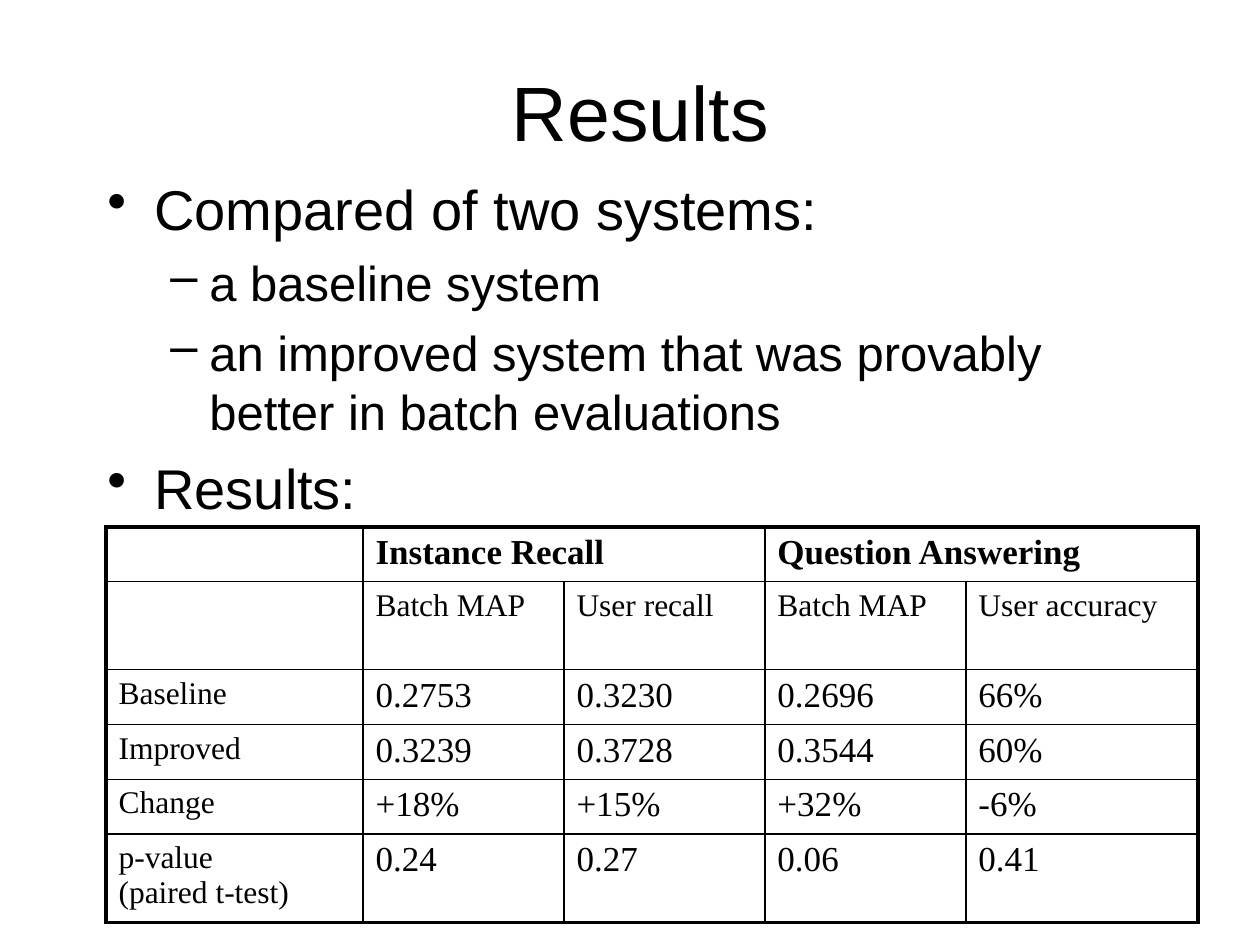
from dataclasses import dataclass

from pptx import Presentation
from pptx.dml.color import RGBColor
from pptx.enum import text
from pptx.oxml import parse_xml
from pptx.oxml.ns import nsdecls
from pptx.util import Emu, Pt

PX = 914400 / 126
BLACK = "000000"
THIN, THICK = 1, 2.25


@dataclass
class Box:
    x: int
    y: int
    w: int
    h: int


@dataclass
class Level:
    size: int
    margin: int
    hang: int
    bullet: str


LEVELS = [Level(32, 47, 47, "•"), Level(28, 102, 39, "–")]

BULLETS = [
    (0, "Compared of two systems:"),
    (1, "a baseline system"),
    (1, "an improved system that was provably better in batch evaluations"),
    (0, "Results:"),
]

COLS = [257, 201, 201, 201, 232]
ROWS = [54, 88, 55, 54, 55, 88]
RESULTS = [
    ["", "Instance Recall", "", "Question Answering", ""],
    ["", "Batch MAP", "User recall", "Batch MAP", "User accuracy"],
    ["Baseline", "0.2753", "0.3230", "0.2696", "66%"],
    ["Improved", "0.3239", "0.3728", "0.3544", "60%"],
    ["Change", "+18%", "+15%", "+32%", "-6%"],
    ["p-value\v(paired t-test)", "0.24", "0.27", "0.06", "0.41"],
]


def px(n: float) -> Emu:
    return Emu(round(n * PX))


def color(value: str) -> RGBColor:
    return RGBColor.from_string(value)


def place(box: Box) -> tuple:
    return px(box.x), px(box.y), px(box.w), px(box.h)


def set_font(p, name: str, size: int, bold: bool = False) -> None:
    p.font.name = name
    p.font.size = Pt(size)
    p.font.bold = bold
    p.font.color.rgb = color(BLACK)


def add_text_box(slide, box: Box):
    tf = slide.shapes.add_textbox(*place(box)).text_frame
    tf.word_wrap = True
    return tf


def add_title(slide, box: Box, title: str) -> None:
    tf = add_text_box(slide, box)
    tf.vertical_anchor = text.MSO_ANCHOR.MIDDLE
    p = tf.paragraphs[0]
    p.text = title
    p.alignment = text.PP_ALIGN.CENTER
    set_font(p, "Arial", 44)


def add_bullets(slide, box: Box, items: list) -> None:
    tf = add_text_box(slide, box)
    for i, (depth, line) in enumerate(items):
        level = LEVELS[depth]
        p = tf.add_paragraph() if i else tf.paragraphs[0]
        p.text = line
        p.level = depth
        p.space_before = Pt(round(level.size * 0.23, 1))
        set_font(p, "Arial", level.size)
        # Hanging indent and bullet character
        pPr = p._p.get_or_add_pPr()
        pPr.set("marL", str(px(level.margin)))
        pPr.set("indent", str(-px(level.hang)))
        bullet = parse_xml(f'<a:buChar {nsdecls("a")} char="{level.bullet}"/>')
        pPr.find("{*}defRPr").addprevious(bullet)


def set_borders(cell, widths: dict) -> None:
    tcPr = cell._tc.get_or_add_tcPr()
    for side, width in widths.items():
        tcPr.append(parse_xml(
            f'<a:ln{side} {nsdecls("a")} w="{Pt(width)}"><a:solidFill>'
            f'<a:srgbClr val="{BLACK}"/></a:solidFill></a:ln{side}>'))


def add_results_table(slide, x: int, y: int) -> None:
    box = Box(x, y, sum(COLS), sum(ROWS))
    table = slide.shapes.add_table(len(ROWS), len(COLS), *place(box)).table
    table.first_row = table.horz_banding = False
    for column, width in zip(table.columns, COLS):
        column.width = px(width)
    for row, height in zip(table.rows, ROWS):
        row.height = px(height)
    for c in (1, 3):
        table.cell(0, c).merge(table.cell(0, c + 1))

    last_row, last_col = len(ROWS) - 1, len(COLS) - 1
    for r, values in enumerate(RESULTS):
        for c, value in enumerate(values):
            cell = table.cell(r, c)
            # Thick outer frame, thin inner grid
            right = c + (cell.span_width - 1 if cell.is_merge_origin else 0)
            set_borders(cell, {
                "L": THICK if c == 0 else THIN,
                "R": THICK if right == last_col else THIN,
                "T": THICK if r == 0 else THIN,
                "B": THICK if r == last_row else THIN,
            })
            cell.fill.background()
            if value:
                cell.text = value
            label = r == 1 or c == 0
            for p in cell.text_frame.paragraphs:
                set_font(p, "Times New Roman", 18 if label else 20, r == 0)


def main() -> None:
    prs = Presentation()
    prs.slide_width, prs.slide_height = px(1260), px(945)
    slide = prs.slides.add_slide(prs.slide_layouts[6])
    add_title(slide, Box(105, 32, 1071, 157), "Results")
    add_bullets(slide, Box(95, 168, 1071, 567), BULLETS)
    add_results_table(slide, 106, 527)
    prs.save("out.pptx")


if __name__ == "__main__":
    main()
